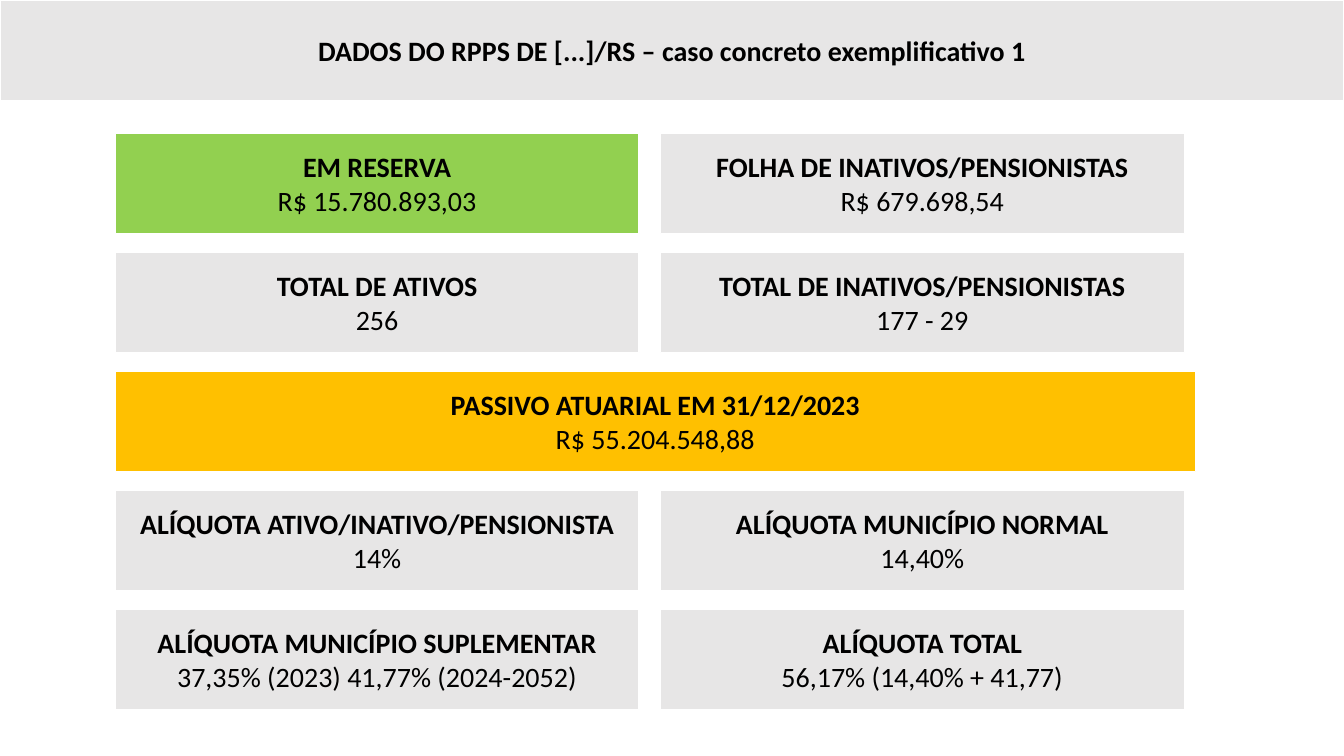
import pptx
import pptx.util
import pptx.dml.color
import pptx.enum.shapes
import pptx.enum.text
from pptx.util import Cm

GREY = pptx.dml.color.RGBColor(0xE7, 0xE6, 0xE6)
GREEN = pptx.dml.color.RGBColor(0x92, 0xD0, 0x50)
AMBER = pptx.dml.color.RGBColor(0xFF, 0xC0, 0x00)
WHITE = pptx.dml.color.RGBColor(0xFF, 0xFF, 0xFF)
BLACK = pptx.dml.color.RGBColor(0x00, 0x00, 0x00)

WIDE = 33.87
LEFT, TOP = 2.9, 3.35
STEP_X, STEP_Y = 13.74, 3
BOX, FULL, HIGH = 13.21, 27.23, 2.54

deck = pptx.Presentation()
deck.slide_width, deck.slide_height = Cm(WIDE), Cm(19.05)
slide = deck.slides.add_slide(deck.slide_layouts[6])


def add_box(left, top, width, fill, lines):
    """Draw a filled box whose first line is bold."""
    box = slide.shapes.add_shape(
        pptx.enum.shapes.MSO_SHAPE.RECTANGLE,
        Cm(left), Cm(top), Cm(width), Cm(HIGH))
    box.shadow.inherit = False
    box.fill.solid()
    box.fill.fore_color.rgb = fill
    box.line.color.rgb = WHITE
    box.line.width = pptx.util.Pt(1)
    frame = box.text_frame
    frame.word_wrap = True
    frame.vertical_anchor = pptx.enum.text.MSO_ANCHOR.MIDDLE
    for i, line in enumerate(lines):
        para = frame.add_paragraph() if i else frame.paragraphs[0]
        para.text = line
        para.alignment = pptx.enum.text.PP_ALIGN.CENTER
        para.font.name = "Calibri"
        para.font.size = pptx.util.Pt(20)
        para.font.bold = i == 0
        para.font.color.rgb = BLACK


add_box(0, 0, WIDE, GREY,
        ["DADOS DO RPPS DE [...]/RS – caso concreto exemplificativo 1"])

rows = [
    [(GREEN, "EM RESERVA", "R$ 15.780.893,03"),
     (GREY, "FOLHA DE INATIVOS/PENSIONISTAS", "R$ 679.698,54")],
    [(GREY, "TOTAL DE ATIVOS", "256"),
     (GREY, "TOTAL DE INATIVOS/PENSIONISTAS", "177 - 29")],
    [(AMBER, "PASSIVO ATUARIAL EM 31/12/2023", "R$ 55.204.548,88")],
    [(GREY, "ALÍQUOTA ATIVO/INATIVO/PENSIONISTA", "14%"),
     (GREY, "ALÍQUOTA MUNICÍPIO NORMAL", "14,40%")],
    [(GREY, "ALÍQUOTA MUNICÍPIO SUPLEMENTAR",
      "37,35% (2023) 41,77% (2024-2052)"),
     (GREY, "ALÍQUOTA TOTAL", "56,17% (14,40% + 41,77)")],
]
for r, row in enumerate(rows):
    width = FULL if len(row) == 1 else BOX
    for c, (fill, title, value) in enumerate(row):
        add_box(LEFT + c * STEP_X, TOP + r * STEP_Y, width, fill,
                [title, value])

deck.save("out.pptx")
